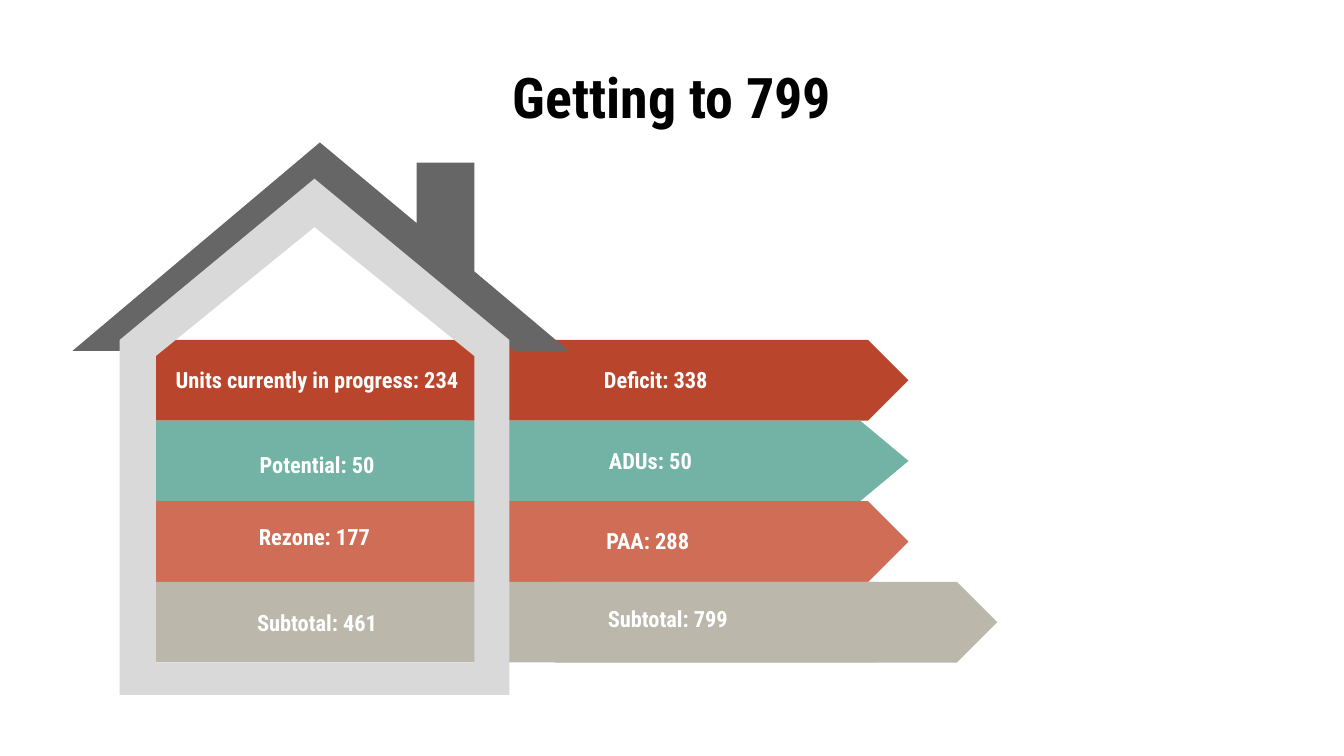
from pptx import Presentation
from pptx.dml.color import RGBColor
from pptx.enum.shapes import MSO_SHAPE as SHAPE
from pptx.enum.text import MSO_ANCHOR as ANCHOR, PP_ALIGN as ALIGN
from pptx.util import Inches, Pt

THEME = {
    "font": "Roboto Condensed",
    "title_size": 30, "label_size": 12,
    "title": "000000", "label": "FFFFFF",
    "red": "B9462C", "teal": "72B3A5", "coral": "CF6D57", "sand": "BCB7AB",
    "roof": "666666", "wall": "D9D9D9",
}
TITLE = "Getting to 799"

# color, band right, arrow left, arrow tip, point depth, then (text, left, drop within row) per label
ROWS = [
    ("red", 3.54, 3.46, 6.76, 0.3, ("Units currently in progress: 234", 1.14, 0.05), ("Deficit: 338", 3.66, 0.05)),
    ("teal", 3.59, 2.92, 6.76, 0.36, ("Potential: 50", 1.14, 0.08), ("ADUs: 50", 3.62, 0.05)),
    ("coral", 6.21, 3.46, 6.76, 0.3, ("Rezone: 177", 1.12, 0.02), ("PAA: 288", 3.6, 0.05)),
    ("sand", 6.52, 4.13, 7.42, 0.3, ("Subtotal: 461", 1.14, 0.06), ("Subtotal: 799", 3.75, 0.03)),
]
ROOF = [(4.23, 2.61), (3.83, 2.61), (2.38, 1.41), (0.93, 2.61), (0.54, 2.61), (2.38, 1.06),
        (3.1, 1.66), (3.1, 1.21), (3.53, 1.21), (3.53, 2.02)]
WALL = [(0.89, 2.53), (0.89, 5.17), (3.79, 5.17), (3.79, 2.53), (2.34, 1.33)]
ROOM = [(1.16, 2.65), (2.34, 1.69), (3.53, 2.65), (3.53, 4.93), (1.16, 4.93)]

WIDTH = 10
HEIGHT = WIDTH * 9 / 16
TOP, ROW_H, ROOM_LEFT = 2.53, 0.6, 1.16
LABEL_W, LABEL_H = 2.44, 0.49


def paint(sp, color):
    sp.shadow.inherit = False
    sp.fill.solid()
    sp.fill.fore_color.rgb = RGBColor.from_string(THEME[color])
    sp.line.fill.background()


def add_block(s, kind, left, top, right, color):
    sp = s.shapes.add_shape(kind, *map(Inches, (left, top, right - left, ROW_H)))
    paint(sp, color)
    return sp


def add_outline(s, color, *contours):
    contours = [[(Inches(x), Inches(y)) for x, y in c] for c in contours]
    fb = s.shapes.build_freeform(*contours[0][0])
    for contour in contours:
        if contour is not contours[0]:
            fb.move_to(*contour[0])
        fb.add_line_segments(contour[1:], close=True)
    paint(fb.convert_to_shape(), color)


def add_text(s, text, box, role):
    tf = s.shapes.add_textbox(*map(Inches, box)).text_frame
    tf.word_wrap = True
    tf.vertical_anchor = ANCHOR.MIDDLE
    tf.margin_left = tf.margin_right = tf.margin_top = tf.margin_bottom = Inches(0.1)
    p = tf.paragraphs[0]
    p.text = text
    p.alignment = ALIGN.CENTER
    p.font.name = THEME["font"]
    p.font.size = Pt(THEME[role + "_size"])
    p.font.bold = True
    p.font.color.rgb = RGBColor.from_string(THEME[role])


def main():
    prs = Presentation()
    prs.slide_width, prs.slide_height = Inches(WIDTH), Inches(HEIGHT)
    s = prs.slides.add_slide(prs.slide_layouts[6])
    add_text(s, TITLE, (0.05 * WIDTH, 0.08 * HEIGHT, 0.9 * WIDTH, 0.53), "title")

    tops = [TOP + i * ROW_H for i in range(len(ROWS))]
    for top, (color, right, left, tip, depth, *_) in zip(tops, ROWS):
        arrow = add_block(s, SHAPE.PENTAGON, left, top, tip, color)
        arrow.adjustments[0] = depth / ROW_H
        add_block(s, SHAPE.RECTANGLE, ROOM_LEFT, top, right, color)

    add_outline(s, "roof", ROOF)
    add_outline(s, "wall", WALL, ROOM)

    for top, (*_, inside, outside) in zip(tops, ROWS):
        for text, left, drop in (inside, outside):
            add_text(s, text, (left, top + drop, LABEL_W, LABEL_H), "label")
    prs.save("out.pptx")


if __name__ == "__main__":
    main()
